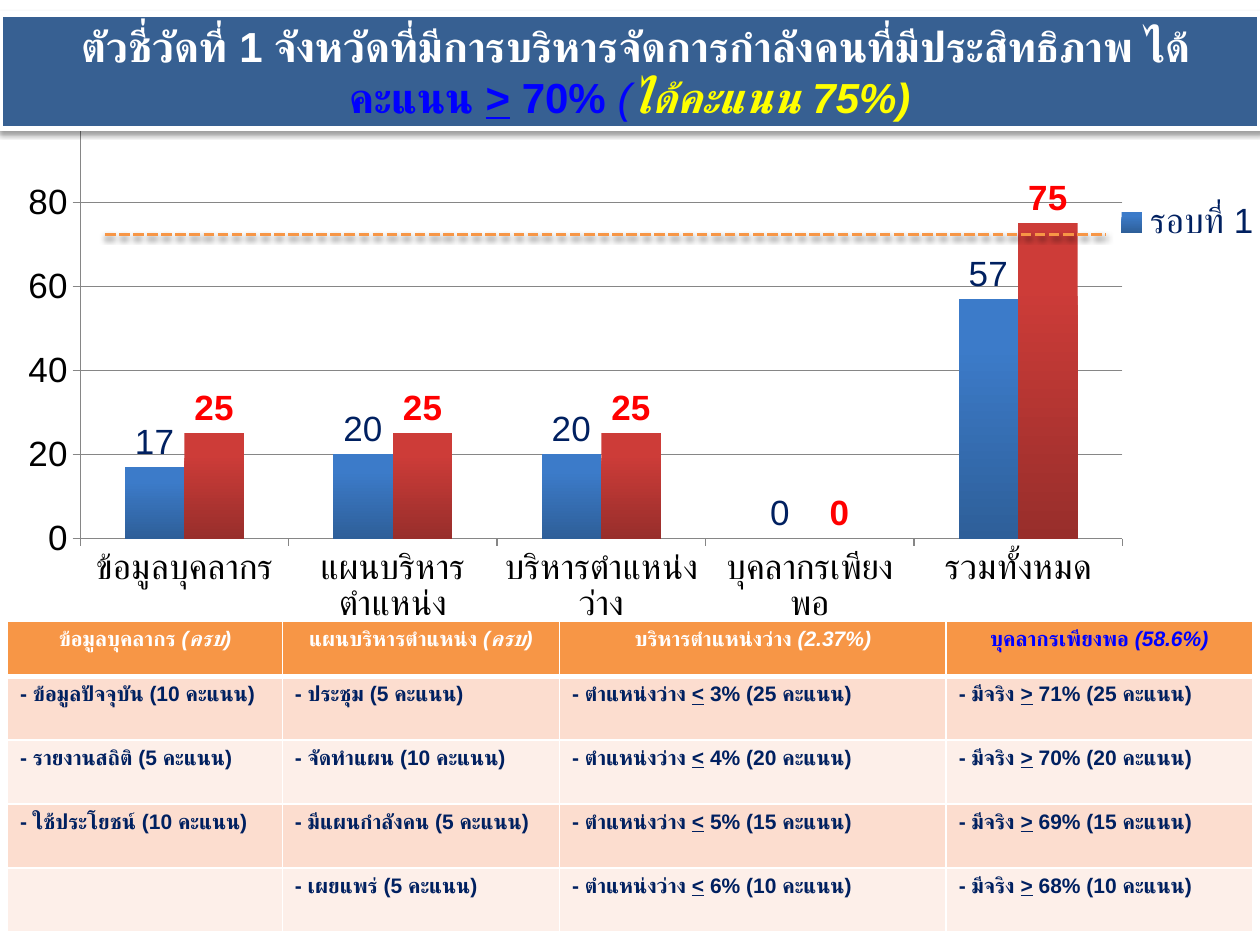
from lxml import etree
from pptx import Presentation
from pptx import util as u
from pptx.chart.data import CategoryChartData
from pptx.dml.color import RGBColor
from pptx.enum import chart, dml, shapes, text
from pptx.oxml import parse_xml
from pptx.oxml.ns import nsdecls, qn

Pt = u.Pt
WHITE = RGBColor(0xFF, 0xFF, 0xFF)
BLACK = RGBColor(0, 0, 0)
NAVY = RGBColor(0x00, 0x20, 0x60)
BANNER = RGBColor(0x37, 0x60, 0x92)
BLUE = RGBColor(0x00, 0x00, 0xFF)
YELLOW = RGBColor(0xFF, 0xFF, 0x00)
RED = RGBColor(0xFF, 0, 0)
ORANGE = RGBColor(0xF7, 0x96, 0x46)
BANDS = RGBColor(0xFC, 0xDD, 0xCF), RGBColor(0xFD, 0xEF, 0xE9)
GRID = RGBColor(0x86, 0x86, 0x86)
BLUE_BAR = RGBColor(0x3C, 0x7B, 0xC9), RGBColor(0x2E, 0x5F, 0x99)
RED_BAR = RGBColor(0xCD, 0x3C, 0x38), RGBColor(0x98, 0x2E, 0x2B)

CATEGORIES = ["ข้อมูลบุคลากร", "แผนบริหารตำแหน่ง", "บริหารตำแหน่งว่าง",
              "บุคลากรเพียงพอ", "รวมทั้งหมด"]
ROUNDS = [("รอบที่ 1", (17, 20, 20, 0, 57), BLUE_BAR, NAVY, False),
          ("รอบที่ 2", (25, 25, 25, 0, 75), RED_BAR, RED, True)]
RESULTS = ["(ครบ)", "(ครบ)", "(2.37%)", "(58.6%)"]
CRITERIA = [
    ["- ข้อมูลปัจจุบัน (10 คะแนน)", "- ประชุม (5 คะแนน)",
     "- ตำแหน่งว่าง < 3% (25 คะแนน)", "- มีจริง > 71% (25 คะแนน)"],
    ["- รายงานสถิติ (5 คะแนน)", "- จัดทำแผน (10 คะแนน)",
     "- ตำแหน่งว่าง < 4% (20 คะแนน)", "- มีจริง > 70% (20 คะแนน)"],
    ["- ใช้ประโยชน์ (10 คะแนน)", "- มีแผนกำลังคน (5 คะแนน)",
     "- ตำแหน่งว่าง < 5% (15 คะแนน)", "- มีจริง > 69% (15 คะแนน)"],
    ["", "- เผยแพร่ (5 คะแนน)",
     "- ตำแหน่งว่าง < 6% (10 คะแนน)", "- มีจริง > 68% (10 คะแนน)"],
]


def set_font(font, color, **values):
    for name, value in {"name": "Arial", **values}.items():
        setattr(font, name, value)
    font.color.rgb = color


def add_runs(p, runs, size):
    for words, color, values in runs:
        r = p.add_run()
        r.text = words
        set_font(r.font, color, **{"size": Pt(size), "bold": True, **values})


def add_shadow(sp):
    sp.element.spPr.append(parse_xml(
        f'<a:effectLst {nsdecls("a")}><a:outerShdw blurRad="{Pt(3.1)}" '
        f'dist="{Pt(1.6)}" dir="5400000" rotWithShape="0"><a:srgbClr val="000000">'
        '<a:alpha val="38000"/></a:srgbClr></a:outerShdw></a:effectLst>'))


def set_layout(part, x, y, w, h, inner=False):
    """Give a plot area or a legend a fixed place in the chart."""
    for old in part.findall(qn("c:layout")):
        part.remove(old)
    layout = parse_xml(f'<c:layout {nsdecls("c")}><c:manualLayout/></c:layout>')
    values = {"layoutTarget": "inner"} if inner else {}
    values.update(xMode="edge", yMode="edge", x=x, y=y, w=w, h=h)
    for tag, value in values.items():
        etree.SubElement(layout[0], qn(f"c:{tag}")).set("val", str(value))
    if inner:
        part.insert(0, layout)
    else:
        part.find(qn("c:overlay")).addprevious(layout)


def style_axis(axis):
    set_font(axis.tick_labels.font, BLACK, size=Pt(20))
    axis.major_tick_mark = chart.XL_TICK_MARK.OUTSIDE
    axis.format.line.color.rgb = GRID


def style_series(series, colors, label_color, bold):
    series.smooth = series.invert_if_negative = False
    fill = series.format.fill
    fill.gradient()
    fill.gradient_angle = 270
    for stop, color, position in zip(fill.gradient_stops, colors, (0.2, 1)):
        stop.color.rgb = color
        stop.position = position
    labels = series.data_labels
    labels.show_value = True
    labels.position = chart.XL_LABEL_POSITION.OUTSIDE_END
    set_font(labels.font, label_color, size=Pt(20), bold=bold)


def add_score_chart(s):
    data = CategoryChartData()
    data.categories = CATEGORIES
    for name, values, *_ in ROUNDS:
        data.add_series(name, values)
    ch = s.shapes.add_chart(chart.XL_CHART_TYPE.COLUMN_CLUSTERED, Pt(-10), Pt(49),
                            Pt(744.5), Pt(311.8), data).chart
    set_font(ch.font, NAVY, size=Pt(20))
    ch.has_title = False
    plot = ch.plots[0]
    plot.vary_by_categories = False
    plot.gap_width, plot.overlap = 150, 0
    for series, (_, _, *look) in zip(plot.series, ROUNDS):
        style_series(series, *look)

    # Axes
    for axis in (ch.category_axis, ch.value_axis):
        style_axis(axis)
    axis = ch.value_axis
    axis.minimum_scale, axis.maximum_scale, axis.major_unit = 0, 100, 20
    axis.major_gridlines.format.line.color.rgb = GRID
    set_layout(ch.element.find(".//" + qn("c:plotArea")),
               0.075, 0.06, 0.8, 0.77, inner=True)

    # Legend for the first round only
    ch.has_legend = True
    ch.legend.position = chart.XL_LEGEND_POSITION.RIGHT
    ch.legend.include_in_layout = False
    set_font(ch.legend.font, NAVY, size=Pt(20))
    legend = ch.element.find(".//" + qn("c:legend"))
    set_layout(legend, 0.87, 0.17, 0.11, 0.16)
    legend.find(qn("c:legendPos")).addnext(parse_xml(
        f'<c:legendEntry {nsdecls("c")}><c:idx val="1"/><c:delete val="1"/>'
        '</c:legendEntry>'))


def add_banner(s):
    sp = s.shapes.add_shape(shapes.MSO_SHAPE.RECTANGLE, 0, Pt(8), Pt(720), Pt(65.5))
    sp.fill.solid()
    sp.fill.fore_color.rgb = BANNER
    sp.line.color.rgb = WHITE
    sp.line.width = Pt(3)
    add_shadow(sp)
    tf = sp.text_frame
    tf.word_wrap = True
    tf.auto_size = text.MSO_AUTO_SIZE.SHAPE_TO_FIT_TEXT
    p = tf.paragraphs[0]
    p.alignment = text.PP_ALIGN.CENTER
    add_runs(p, [
        (" ตัวชี่วัดที่ 1 จังหวัดที่มีการบริหารจัดการกำลังคนที่มีประสิทธิภาพ ได้", WHITE, {}),
        ("คะแนน ", BLUE, {}),
        (">", BLUE, {"underline": True}),
        (" 70% ", BLUE, {}),
        ("(", BLUE, {"bold": False, "italic": True}),
        ("ได้คะแนน 75%)", YELLOW, {"italic": True})], 24)


def style_cell(cell, color, top, bottom):
    tc_pr = cell._tc.get_or_add_tcPr()
    for side, width in zip("LRTB", (1, 1, top, bottom)):
        tc_pr.append(parse_xml(
            f'<a:ln{side} {nsdecls("a")} w="{Pt(width)}"><a:solidFill>'
            f'<a:srgbClr val="{WHITE}"/></a:solidFill></a:ln{side}>'))
    cell.fill.solid()
    cell.fill.fore_color.rgb = color


def criterion_runs(words):
    """Underline the comparison sign, if there is one."""
    sign = next((c for c in "<>" if c in words), None)
    parts = words.partition(sign) if sign else [words]
    return [(part, NAVY, {"underline": part == sign}) for part in parts if part]


def add_criteria_table(s):
    widths = [157, 158.4, 221, 175]
    table = s.shapes.add_table(5, 4, Pt(4.3), Pt(355), Pt(sum(widths)), Pt(177)).table
    for column, width in zip(table.columns, widths):
        column.width = Pt(width)
    for i, row in enumerate(table.rows):
        row.height = Pt(36.5 if i else 31.5)

    # Header
    for j, (title, result) in enumerate(zip(CATEGORIES, RESULTS)):
        cell = table.cell(0, j)
        style_cell(cell, ORANGE, 1, 3)
        color = BLUE if j == 3 else WHITE
        p = cell.text_frame.paragraphs[0]
        p.alignment = text.PP_ALIGN.CENTER
        add_runs(p, [(title + " ", color, {}), (result, color, {"italic": True})], 12)

    # Scoring criteria
    for i, criteria in enumerate(CRITERIA):
        for j, words in enumerate(criteria):
            cell = table.cell(i + 1, j)
            style_cell(cell, BANDS[i % 2], 1 if i else 3, 1)
            add_runs(cell.text_frame.paragraphs[0], criterion_runs(words), 12)


def add_target_line(s):
    line = s.shapes.add_connector(shapes.MSO_CONNECTOR.STRAIGHT,
                                  Pt(60), Pt(134), Pt(632), Pt(134))
    line.line.color.rgb = ORANGE
    line.line.width = Pt(2)
    line.line.dash_style = dml.MSO_LINE.SQUARE_DOT
    add_shadow(line)


def main():
    prs = Presentation()
    prs.slide_width, prs.slide_height = Pt(720), Pt(540)
    s = prs.slides.add_slide(prs.slide_layouts[6])
    add_score_chart(s)
    add_banner(s)
    add_criteria_table(s)
    add_target_line(s)
    prs.save("out.pptx")


if __name__ == "__main__":
    main()
